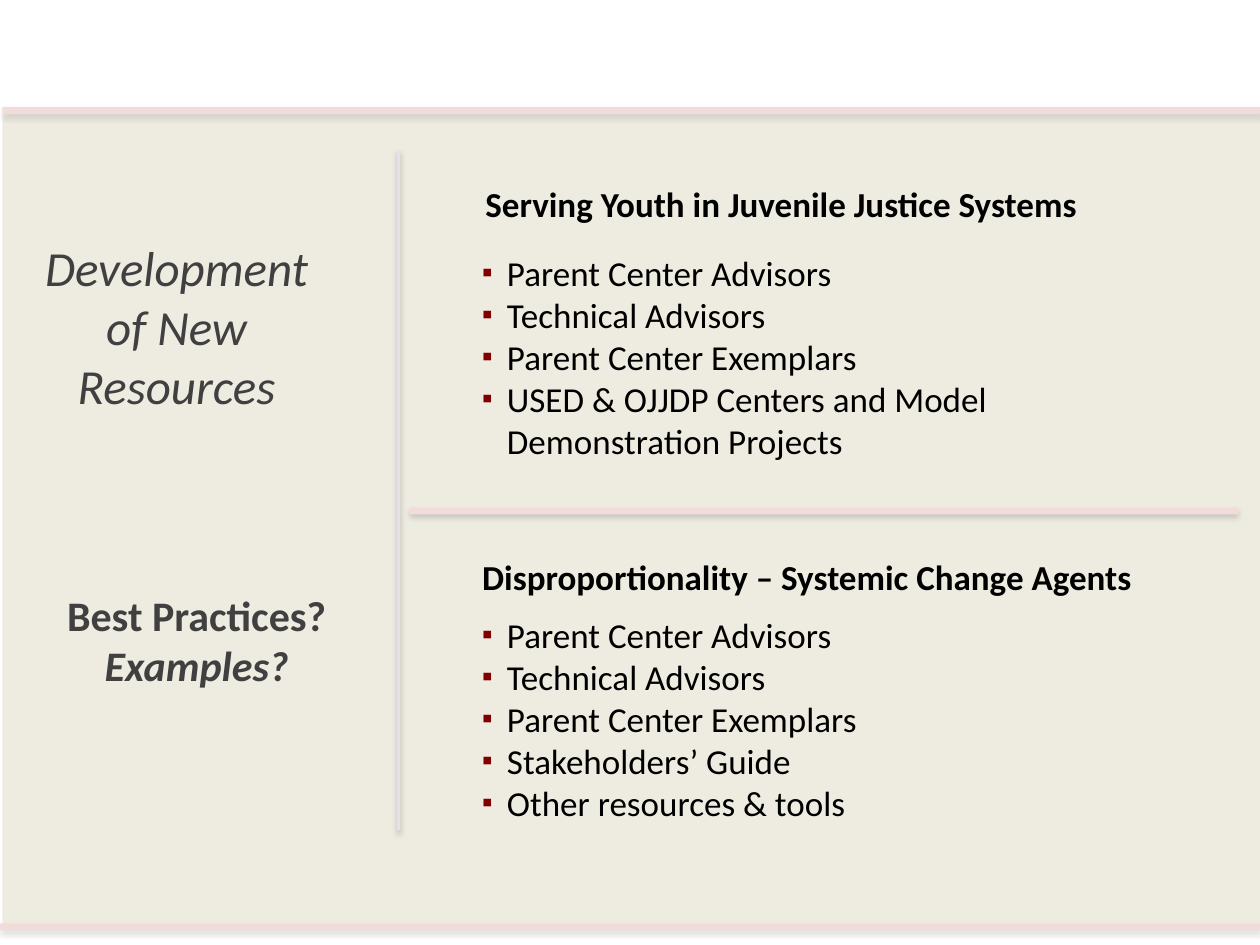
from lxml.etree import SubElement
from pptx import Presentation
from pptx.dml.color import RGBColor
from pptx.enum.shapes import MSO_CONNECTOR, MSO_SHAPE
from pptx.enum.text import PP_ALIGN
from pptx.oxml.ns import qn
from pptx.util import Cm, Pt

COLORS = {
    "panel": "EEECE1",
    "bar": "F2DCDB",
    "divider": "E6E0EC",
    "shadow": "808080",
    "side": "404040",
    "body": "000000",
    "bullet": "800000",
}
FONT = "Calibri"
SLIDE_WIDTH, SLIDE_HEIGHT = 25.4, 19.05
BAR_HEIGHT = 0.13
INDENT = 0.5

PANEL = (0.05, 2.29, SLIDE_WIDTH, 16.46)
BARS = [
    (0, 18.62, SLIDE_WIDTH),
    (0.05, 2.16, SLIDE_WIDTH),
    (8.26, 10.24, 16.69),
]
DIVIDER = (8.03, 3.02, 16.74)

SIDE_TEXTS = [
    ((0.64, 4.67, 5.84, 2.39), 28, [("Development of New Resources", False, True)]),
    ((0.97, 11.76, 5.99, 2.31), 24, [("Best Practices?", True, False), ("Examples?", True, True)]),
]
TOPICS = [
    {
        "heading": "Serving Youth in Juvenile Justice Systems",
        "heading_box": (9.17, 3.56, 13.16, 1.12),
        "align": PP_ALIGN.CENTER,
        "resources": [
            "Parent Center Advisors",
            "Technical Advisors",
            "Parent Center Exemplars",
            "USED & OJJDP Centers and Model Demonstration Projects",
        ],
        "resources_box": (9.47, 4.95, 13.16, 4.52),
    },
    {
        "heading": "Disproportionality – Systemic Change Agents",
        "heading_box": (9.47, 11.07, 14.25, 1.12),
        "align": PP_ALIGN.LEFT,
        "resources": [
            "Parent Center Advisors",
            "Technical Advisors",
            "Parent Center Exemplars",
            "Stakeholders’ Guide",
            "Other resources & tools",
        ],
        "resources_box": (9.47, 12.24, 10.03, 4.52),
    },
]


def rgb(name):
    return RGBColor.from_string(COLORS[name])


def add_shadow(shape, opacity, distance):
    effects = SubElement(shape._element.spPr, qn("a:effectLst"))
    shadow = SubElement(
        effects, qn("a:outerShdw"), blurRad=str(Pt(3.1)), dist=str(Pt(distance)),
        dir="5400000", algn="ctr", rotWithShape="0",
    )
    color = SubElement(shadow, qn("a:srgbClr"), val=COLORS["shadow"])
    SubElement(color, qn("a:alpha"), val=str(opacity * 1000))


def add_block(slide, box, color):
    block = slide.shapes.add_shape(MSO_SHAPE.RECTANGLE, *map(Cm, box))
    block.fill.solid()
    block.fill.fore_color.rgb = rgb(color)
    block.line.fill.background()
    return block


def add_bullet(paragraph):
    properties = paragraph._p.get_or_add_pPr()
    properties.set("marL", str(Cm(INDENT)))
    properties.set("indent", str(-Cm(INDENT)))
    color = SubElement(properties, qn("a:buClr"))
    SubElement(color, qn("a:srgbClr"), val=COLORS["bullet"])
    SubElement(properties, qn("a:buSzPct"), val="85000")
    SubElement(properties, qn("a:buFont"), typeface=FONT)
    SubElement(properties, qn("a:buChar"), char="▪")


def add_text(slide, box, lines, size, color, align, bulleted=False):
    frame = slide.shapes.add_textbox(*map(Cm, box)).text_frame
    frame.word_wrap = True
    for index, (text, bold, italic) in enumerate(lines):
        paragraph = frame.add_paragraph() if index else frame.paragraphs[0]
        paragraph.alignment = align
        if bulleted:
            add_bullet(paragraph)
        run = paragraph.add_run()
        run.text = text
        run.font.name = FONT
        run.font.size = Pt(size)
        run.font.bold = bold
        run.font.italic = italic
        run.font.color.rgb = rgb(color)


def main():
    deck = Presentation()
    deck.slide_width, deck.slide_height = Cm(SLIDE_WIDTH), Cm(SLIDE_HEIGHT)
    slide = deck.slides.add_slide(deck.slide_layouts[6])

    add_block(slide, PANEL, "panel").shadow.inherit = False
    x, top, bottom = DIVIDER
    divider = slide.shapes.add_connector(
        MSO_CONNECTOR.STRAIGHT, Cm(x), Cm(top), Cm(x), Cm(bottom)
    )
    divider.line.color.rgb = rgb("divider")
    divider.line.width = Pt(2)
    add_shadow(divider, 38, 1.6)
    for left, top, width in BARS:
        add_shadow(add_block(slide, (left, top, width, BAR_HEIGHT), "bar"), 35, 1.8)

    for box, size, lines in SIDE_TEXTS:
        add_text(slide, box, lines, size, "side", PP_ALIGN.CENTER)
    for topic in TOPICS:
        heading = [(topic["heading"], True, False)]
        add_text(slide, topic["heading_box"], heading, 20, "body", topic["align"])
        resources = [(text, False, False) for text in topic["resources"]]
        add_text(slide, topic["resources_box"], resources, 20, "body", PP_ALIGN.LEFT, True)

    deck.save("out.pptx")


if __name__ == "__main__":
    main()
